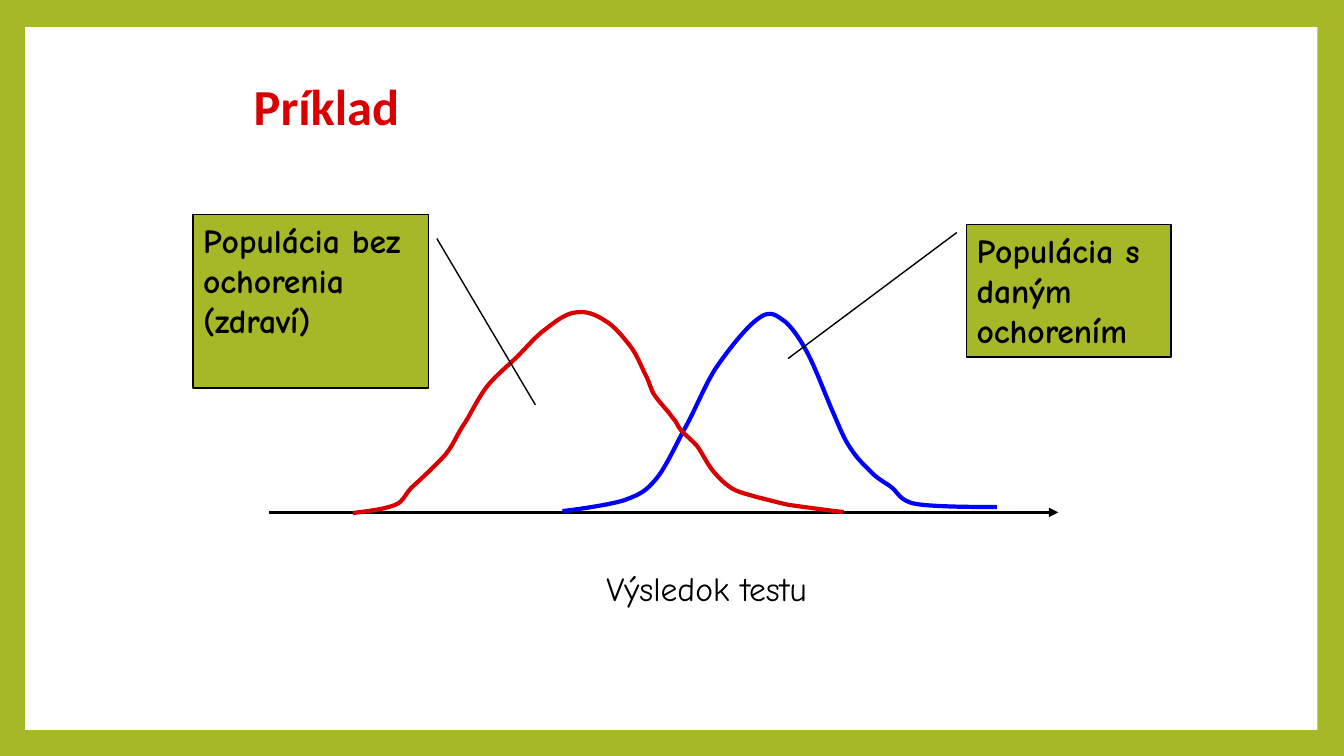
from lxml import etree
from pptx import Presentation
from pptx import util as u
from pptx.dml.color import RGBColor
from pptx.enum import shapes, text
from pptx.oxml import ns

COLORS = {"olive": "A6B727", "white": "FFFFFF", "black": "000000", "red": "D80000", "blue": "0000FF"}


def color(name):
    return RGBColor.from_string(COLORS[name])


def write(shape, wording, font, size, ink, bold, anchor):
    frame = shape.text_frame
    frame.word_wrap = True
    frame.vertical_anchor = anchor
    frame.text = wording
    para = frame.paragraphs[0]
    para.alignment = text.PP_ALIGN.LEFT
    span = para.runs[0]
    span.font.name = font
    span.font.size = u.Pt(size)
    span.font.bold = bold
    span.font.color.rgb = color(ink)


deck = Presentation()
deck.slide_width, deck.slide_height = u.Pt(960), u.Pt(540)
page = deck.slides.add_slide(deck.slide_layouts[6])
page.background.fill.solid()
page.background.fill.fore_color.rgb = color("olive")

panel = page.shapes.add_shape(shapes.MSO_SHAPE.RECTANGLE, u.Pt(18), u.Pt(19.4), u.Pt(923), u.Pt(502))
panel.shadow.inherit = False
panel.fill.solid()
panel.fill.fore_color.rgb = color("white")
panel.line.fill.background()

title = page.shapes.add_textbox(u.Pt(174.2), u.Pt(30.2), u.Pt(642), u.Pt(90))
write(title, "Príklad", "Calibri", 36, "red", True, text.MSO_ANCHOR.MIDDLE)

axis = page.shapes.add_connector(shapes.MSO_CONNECTOR.STRAIGHT, u.Pt(192), u.Pt(366), u.Pt(756), u.Pt(366))
axis.line.color.rgb = color("black")
axis.line.width = u.Pt(2.25)
etree.SubElement(axis.line._get_or_add_ln(), ns.qn("a:tailEnd"), type="triangle")
etree.SubElement(axis._element.spPr, ns.qn("a:effectLst"))

axis_label = page.shapes.add_textbox(u.Pt(426), u.Pt(402), u.Pt(198), u.Pt(36))
write(axis_label, "Výsledok testu", "Comic Neue", 24, "black", False, text.MSO_ANCHOR.TOP)

# Each row after the start holds two control points and an end point.
curves = [
    ("blue", (558, 507), [
        (568, 506, 605, 501, 620, 496), (636, 490, 641, 487, 651, 475),
        (661, 463, 670, 442, 680, 424), (690, 406, 698, 385, 709, 367),
        (721, 349, 740, 325, 751, 317), (762, 308, 768, 311, 776, 317),
        (784, 322, 793, 335, 801, 350), (809, 365, 819, 392, 826, 408),
        (833, 424, 837, 435, 844, 445), (851, 456, 860, 464, 867, 471),
        (874, 477, 877, 478, 884, 483), (891, 488, 892, 497, 909, 500),
        (927, 503, 972, 503, 989, 503)]),
    ("red", (350, 509), [
        (366, 507, 382, 505, 392, 501), (401, 497, 400, 493, 408, 484),
        (417, 476, 433, 461, 442, 451), (450, 441, 452, 434, 459, 423),
        (466, 413, 473, 397, 482, 385), (491, 373, 503, 364, 513, 354),
        (523, 344, 532, 333, 542, 326), (551, 319, 561, 311, 571, 310),
        (581, 308, 591, 312, 600, 318), (609, 323, 618, 334, 625, 343),
        (632, 352, 636, 363, 640, 371), (645, 380, 645, 386, 650, 393),
        (655, 400, 663, 408, 667, 414), (672, 419, 671, 421, 675, 426),
        (679, 431, 686, 436, 692, 443), (697, 450, 702, 461, 708, 468),
        (714, 475, 720, 481, 727, 485), (734, 489, 741, 490, 750, 493),
        (759, 495, 769, 498, 783, 501), (798, 503, 826, 507, 837, 508)]),
]
for ink, start, bends in curves:
    builder = page.shapes.build_freeform(*start, scale=u.Pt(0.72))
    builder.add_line_segments([bend[i:i + 2] for bend in bends for i in (0, 2, 4)], close=False)
    curve = builder.convert_to_shape()
    outline = curve._element.find(".//" + ns.qn("a:path"))
    segments = outline.findall(ns.qn("a:lnTo"))
    for i in range(0, len(segments), 3):
        bezier = etree.SubElement(outline, ns.qn("a:cubicBezTo"))
        for segment in segments[i:i + 3]:
            bezier.append(segment[0])
            outline.remove(segment)
    curve.shadow.inherit = False
    curve.fill.background()
    curve.line.color.rgb = color(ink)
    curve.line.width = u.Pt(3)

callouts = [
    ("Populácia s daným ochorením", (690.5, 160.5, 146, 94.5), (0.059, -0.048, 1.012, -0.874)),
    ("Populácia bez ochorenia (zdraví)", (138, 153.4, 168, 123.8), (0.137, 1.036, 1.097, 1.455)),
]
for wording, place, pointer in callouts:
    box = page.shapes.add_shape(shapes.MSO_SHAPE.LINE_CALLOUT_1, *[u.Pt(length) for length in place])
    for i, value in enumerate(pointer):
        box.adjustments[i] = value
    box.shadow.inherit = False
    box.fill.solid()
    box.fill.fore_color.rgb = color("olive")
    box.line.color.rgb = color("black")
    box.line.width = u.Pt(1)
    write(box, wording, "Comic Neue", 24, "black", True, text.MSO_ANCHOR.TOP)

deck.save("out.pptx")
